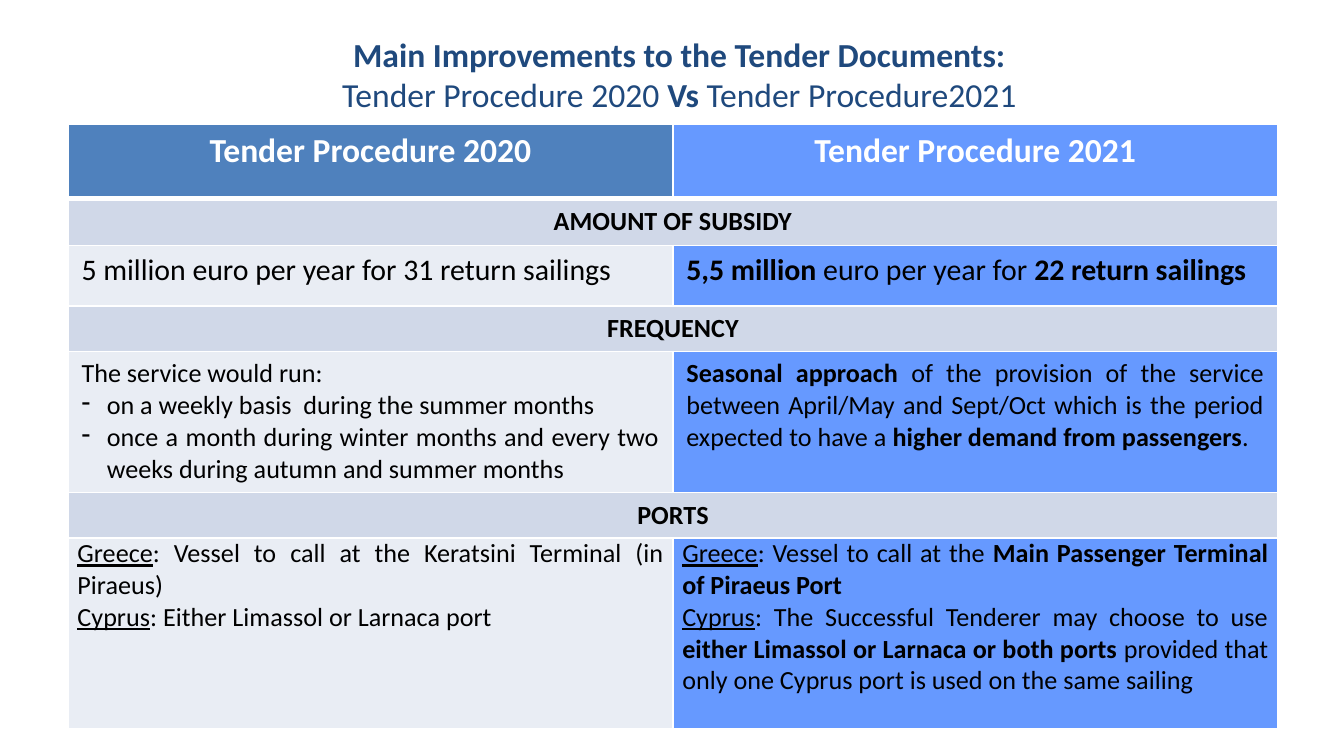
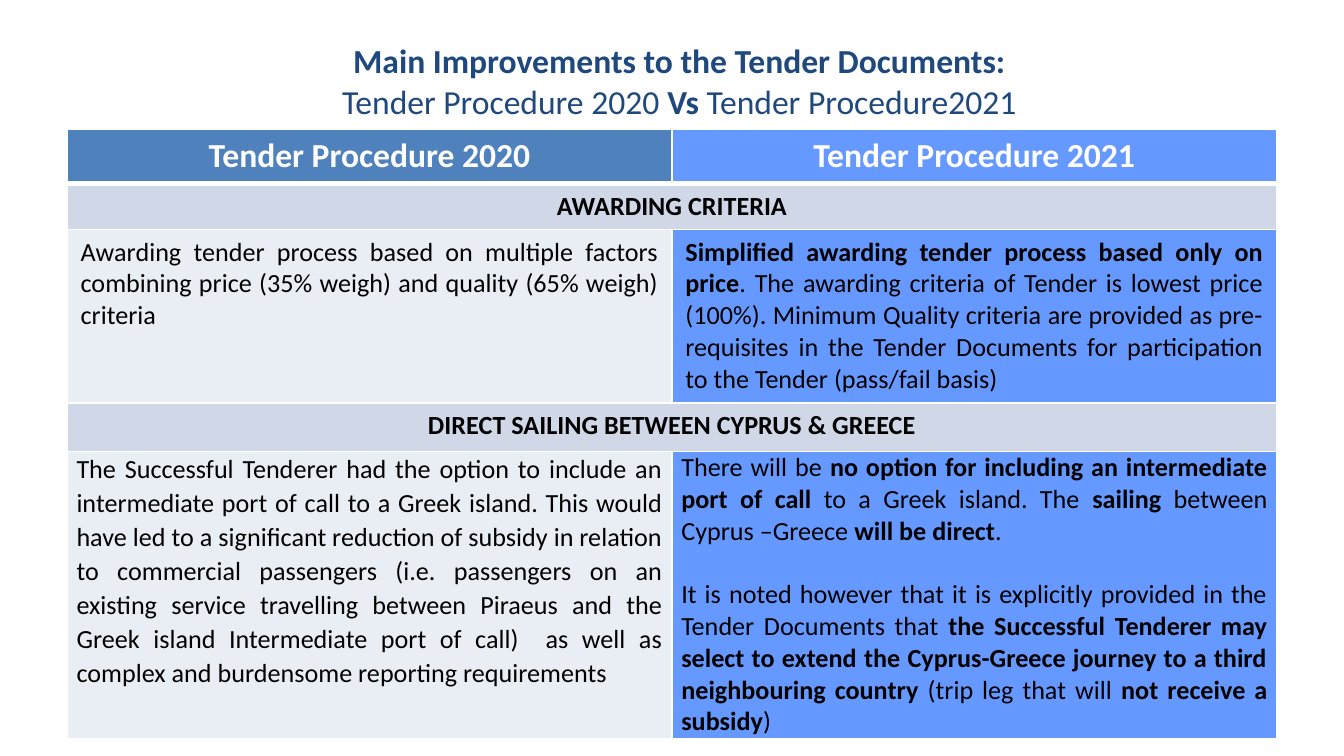
from dataclasses import dataclass
from lxml.etree import SubElement
from pptx import Presentation
from pptx.dml.color import RGBColor
from pptx.enum.text import MSO_ANCHOR, MSO_AUTO_SIZE, PP_ALIGN
from pptx.oxml import parse_xml
from pptx.oxml.ns import nsdecls, qn
from pptx.util import Pt


@dataclass(frozen=True)
class Theme:
    font: str = "Calibri"
    navy: str = "1F497D"
    blue: str = "4F81BD"
    bright: str = "6699FF"
    band: str = "D0D8E8"
    pale: str = "E9EDF4"
    white: str = "FFFFFF"
    black: str = "000000"
    head: int = 18
    lead: int = 16
    body: int = 14


T = Theme()
WIDTH, HEIGHT = 720, 405
TABLE_W = 648
HANG = 13.5
TIGHT = {"inset": (5, 0)}
ROOMY = {"line": 1.07, "after": 8}

# *bold*, _underlined_; a paragraph that starts with "- " is a list item
TITLE = ("*Main Improvements to the Tender Documents:*\n"
         "Tender Procedure 2020 *Vs* Tender Procedure2021")
HEADS = ("Tender Procedure 2020", "Tender Procedure 2021")

# Each section: heading, heading height, row height, 2020 cell, 2021 cell;
# each cell: paragraphs and format
SLIDES = [
    {"title_y": 6, "left": 36.5, "top": 66.5, "head_h": 40, "sections": [
        ("AMOUNT OF SUBSIDY", 25, 32.5,
         (["5 million euro per year for 31 return sailings"],
          {"size": T.lead}),
         (["*5,5 million* euro per year for *22 return sailings*"],
          {"size": T.lead})),
        ("FREQUENCY", 24.3, 75.6,
         (["The service would run:",
           "- on a weekly basis  during the summer months",
           "- once a month during winter months and every two weeks "
           "during autumn and summer months"], {}),
         (["*Seasonal approach* of the provision of the service between "
           "April/May and Sept/Oct which is the period expected to have a "
           "*higher demand from passengers*."], {})),
        ("PORTS", 24.3, 102.5,
         (["_Greece_: Vessel to call at the Keratsini Terminal (in Piraeus)",
           "_Cyprus_: Either Limassol or Larnaca port"], TIGHT),
         (["_Greece_: Vessel to call at the *Main Passenger Terminal of "
           "Piraeus Port*",
           "_Cyprus_: The Successful Tenderer may choose to use *either "
           "Limassol or Larnaca or both ports* provided that only one "
           "Cyprus port is used on the same sailing"], TIGHT)),
    ]},
    {"title_y": 9.5, "left": 36, "top": 69, "head_h": 29.5, "sections": [
        ("AWARDING CRITERIA", 24.5, 93,
         (["Awarding tender process based on multiple factors combining "
           "price (35% weigh) and quality (65% weigh) criteria"], {}),
         (["*Simplified awarding tender process based only on price*. The "
           "awarding criteria of Tender is lowest price (100%). Minimum "
           "Quality criteria are provided as pre-requisites in the Tender "
           "Documents for participation to the Tender (pass/fail basis)"],
          {})),
        ("DIRECT SAILING BETWEEN CYPRUS & GREECE", 26, 154,
         (["The Successful Tenderer had the option to include an "
           "intermediate port of call to a Greek island. This would have "
           "led to a significant reduction of subsidy in relation to "
           "commercial passengers (i.e. passengers on an existing service "
           "travelling between Piraeus and the Greek island Intermediate "
           "port of call)  as well as complex and burdensome reporting "
           "requirements"], TIGHT | ROOMY),
         (["There will be *no option for including an intermediate port of "
           "call* to a Greek island. The *sailing* between Cyprus –Greece "
           "*will be direct*.",
           "It is noted however that it is explicitly provided in the "
           "Tender Documents that *the Successful Tenderer may select to "
           "extend the Cyprus-Greece journey to a third neighbouring "
           "country* (trip leg that will *not receive a subsidy*)"],
          TIGHT | {"gap": 17})),
    ]},
]


def write(para, text, size, color, align):
    """Fill a paragraph from marked text and format its runs."""
    para.alignment = align
    for row, line in enumerate(text.split("\n")):
        if row:
            para.add_line_break()
        for i, chunk in enumerate(line.split("*")):
            for j, part in enumerate(chunk.split("_")):
                if not part:
                    continue
                run = para.add_run()
                run.text = part
                font = run.font
                font.name, font.size = T.font, Pt(size)
                font.bold, font.underline = i % 2 == 1, j % 2 == 1
                font.color.rgb = RGBColor.from_string(color)


def bullet(para):
    props = para._p.get_or_add_pPr()
    props.set("marL", str(Pt(HANG)))
    props.set("indent", str(-Pt(HANG)))
    SubElement(props, qn("a:buChar"), char="-")


def paint(cell, fill, bottom=1):
    """Set the cell's fill and its white borders."""
    cell.fill.solid()
    cell.fill.fore_color.rgb = RGBColor.from_string(fill)
    props = cell._tc.get_or_add_tcPr()
    for i, side in enumerate("LRTB"):
        width = Pt(bottom if side == "B" else 1)
        props.insert(i, parse_xml(
            f'<a:ln{side} {nsdecls("a")} w="{width}"><a:solidFill>'
            f'<a:srgbClr val="{T.white}"/></a:solidFill></a:ln{side}>'))


def fill_body(cell, paras, size=T.body, inset=None, line=None, after=None,
              gap=None):
    if inset:
        cell.margin_left = cell.margin_right = Pt(inset[0])
        cell.margin_top = cell.margin_bottom = Pt(inset[1])
    frame = cell.text_frame
    for i, text in enumerate(paras):
        para = frame.add_paragraph() if i else frame.paragraphs[0]
        write(para, text.removeprefix("- "), size, T.black, PP_ALIGN.JUSTIFY)
        if line:
            para.line_spacing = line
        if after:
            para.space_after = Pt(after)
        if gap and i:
            para.space_before = Pt(gap)
        if text.startswith("- "):
            bullet(para)


def add_title(slide, top):
    title = slide.shapes.title
    title.left, title.top = Pt(36), Pt(top)
    title.width, title.height = Pt(656), Pt(67.5)
    frame = title.text_frame
    frame.auto_size = MSO_AUTO_SIZE.NONE
    frame.vertical_anchor = MSO_ANCHOR.MIDDLE
    write(frame.paragraphs[0], TITLE, T.head, T.navy, PP_ALIGN.CENTER)


def add_grid(slide, left, top, head_h, sections):
    heights = [head_h]
    for _, band_h, body_h, *_ in sections:
        heights += [band_h, body_h]
    grid = slide.shapes.add_table(len(heights), 2, Pt(left), Pt(top),
                                  Pt(TABLE_W), Pt(sum(heights))).table
    grid.horz_banding = False
    for row, height in zip(grid.rows, heights):
        row.height = Pt(height)
    for col, (text, fill) in enumerate(zip(HEADS, (T.blue, T.bright))):
        cell = grid.cell(0, col)
        paint(cell, fill, bottom=3)
        write(cell.text_frame.paragraphs[0], f"*{text}*", T.head, T.white,
              PP_ALIGN.CENTER)
    for i, (name, _, _, *pair) in enumerate(sections):
        row = 2 * i + 1
        band = grid.cell(row, 0)
        band.merge(grid.cell(row, 1))
        write(band.text_frame.paragraphs[0], f"*{name}*", T.body, T.black,
              PP_ALIGN.CENTER)
        for col, (paras, style) in enumerate(pair):
            paint(grid.cell(row, col), T.band)
            cell = grid.cell(row + 1, col)
            paint(cell, (T.pale, T.bright)[col])
            fill_body(cell, paras, **style)


def main():
    deck = Presentation()
    deck.slide_width, deck.slide_height = Pt(WIDTH), Pt(HEIGHT)
    for page in SLIDES:
        slide = deck.slides.add_slide(deck.slide_layouts[5])
        add_title(slide, page["title_y"])
        add_grid(slide, page["left"], page["top"], page["head_h"],
                 page["sections"])
    deck.save("out.pptx")


if __name__ == "__main__":
    main()
